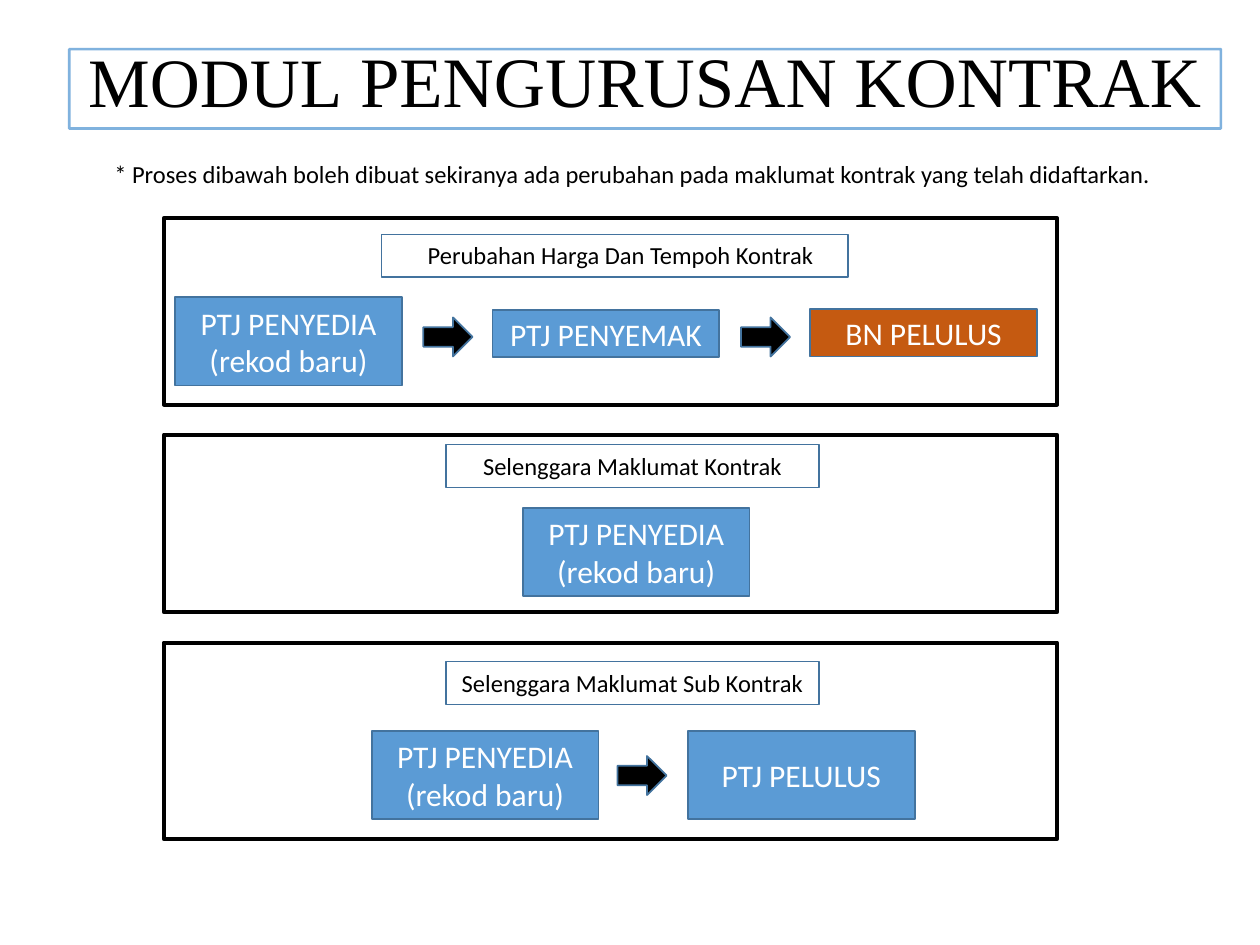
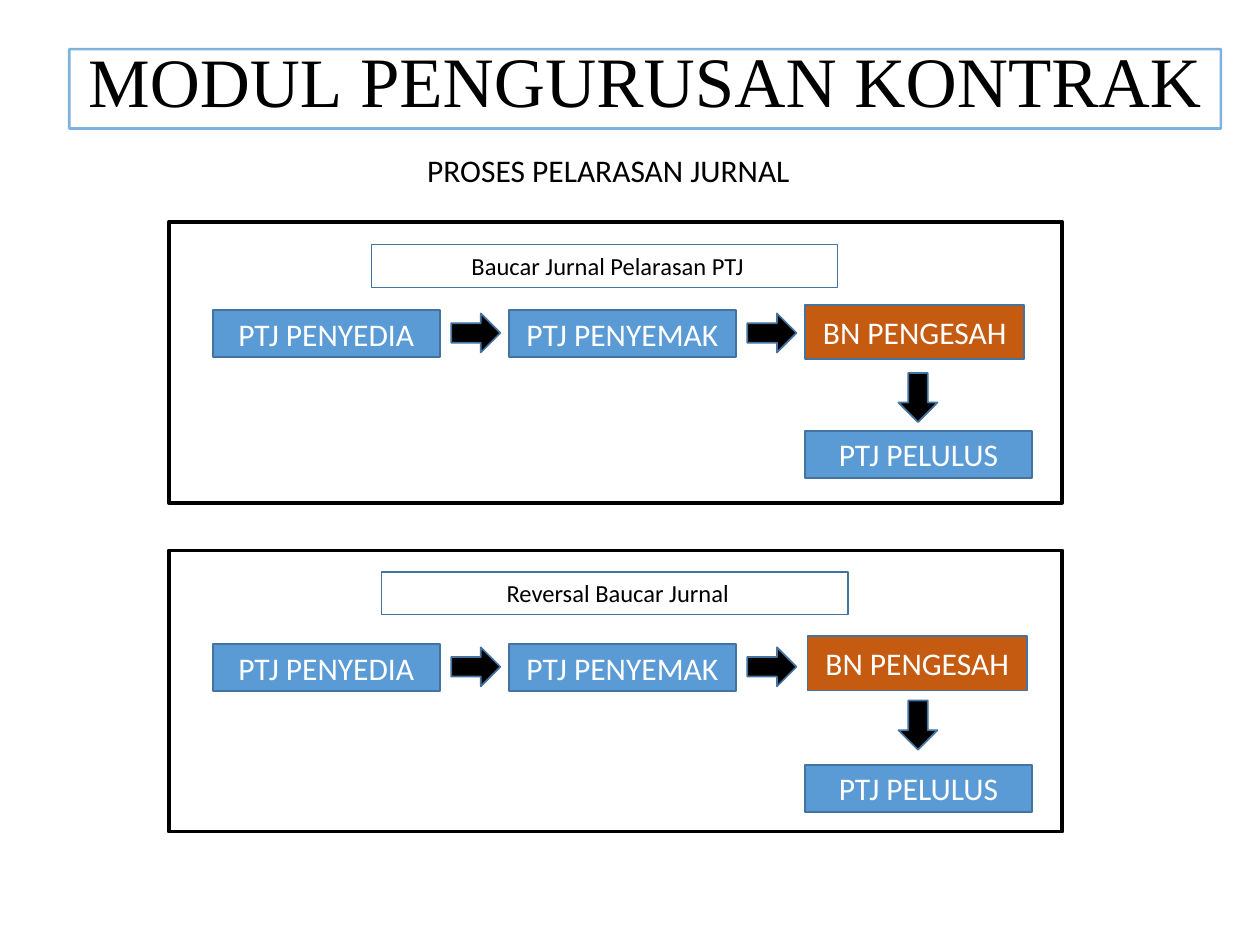
import pptx
import pptx.util
import pptx.dml.color
import pptx.enum.shapes
import pptx.enum.text
import pptx.oxml
import pptx.oxml.ns

Pt = pptx.util.Pt
Kind = pptx.enum.shapes.MSO_SHAPE
Anchor = pptx.enum.text.MSO_ANCHOR
hue = pptx.dml.color.RGBColor.from_string

BLACK, WHITE = "000000", "FFFFFF"
BLUE, EDGE, RUST = "5B9BD5", "43739E", "C55A11"
STEP_W, STEP_H, TALL_H = 129.6, 26.9, 50.4
ARROW_W, ARROW_H = 28.1, 22.3
FRAME_W, HEAD_H = 510.5, 24.5


def box(page, kind, spot, fill, edge, width):
    shape = page.shapes.add_shape(kind, *[Pt(n) for n in spot])
    shape.shadow.inherit = False
    if fill:
        shape.fill.solid()
        shape.fill.fore_color.rgb = hue(fill)
    else:
        shape.fill.background()
    shape.line.color.rgb = hue(edge)
    shape.line.width = Pt(width)
    return shape


def write(shape, text, size, color, anchor, font="Calibri"):
    frame = shape.text_frame
    frame.word_wrap = True
    frame.vertical_anchor = anchor
    frame.text = text
    for para in frame.paragraphs:
        para.alignment = pptx.enum.text.PP_ALIGN.CENTER
        for run in para.runs:
            run.font.name = font
            run.font.size = Pt(size)
            run.font.color.rgb = hue(color)
    return frame


maker = "PTJ PENYEDIA\n(rekod baru)"
change = {
    "note": ("* Proses dibawah boleh dibuat sekiranya ada perubahan pada maklumat kontrak yang telah didaftarkan.",
             14, (38.2, 87.1, 646.6, 24.5)),
    "frames": [(93.6, 124.6, 106.6), (93.6, 248.4, 101.5), (93.6, 367.2, 112.3)],
    "heads": [("Perubahan Harga Dan Tempoh Kontrak", 218.2, 133.9, 266.4, 6.4),
              ("Selenggara Maklumat Kontrak", 254.9, 254.2, 213.1, 0),
              ("Selenggara Maklumat Sub Kontrak", 254.9, 378, 213.1, 0)],
    "steps": [(maker, BLUE, 100.1, 169.9, STEP_W, TALL_H),
              ("PTJ PENYEMAK", BLUE, 281.5, 177.1, STEP_W, STEP_H),
              ("BN PELULUS", RUST, 463, 176.4, STEP_W, 27.4),
              (maker, BLUE, 298.8, 290.2, STEP_W, TALL_H),
              (maker, BLUE, 212.4, 417.6, STEP_W, TALL_H),
              ("PTJ PELULUS", BLUE, 393.1, 417.6, STEP_W, TALL_H)],
    "arrows": [(241.9, 181.4, 0), (423.4, 181.4, 0), (352.8, 432, 0)],
}

journal = {
    "note": ("PROSES PELARASAN JURNAL", 18, (101.5, 82.8, 492.5, 28.8)),
    "frames": [(96.5, 126.7, 160.6), (96.5, 314.6, 160.6)],
    "heads": [("Baucar Jurnal Pelarasan PTJ", 212.4, 139.7, 266.4, 3.2),
              ("Reversal Baucar Jurnal", 218.2, 326.9, 266.4, 3.2)],
    "steps": [],
    "arrows": [],
}
left, pitch = 121.7, 169.2
for top, bank_x, bank_y, down in [(177.1, 460.1, 174.2, 216), (367.9, 461.5, 363.6, 403.2)]:
    for col, name in enumerate(["PTJ PENYEDIA", "PTJ PENYEMAK"]):
        journal["steps"].append((name, BLUE, left + col * pitch, top, STEP_W, STEP_H))
        journal["arrows"].append((257.8 + col * pitch, top + 2, 0))
    journal["steps"].append(("BN PENGESAH", RUST, bank_x, bank_y, 125.3, 31))
    journal["steps"].append(("PTJ PELULUS", BLUE, left + 2 * pitch, top + 69.1, STEP_W, STEP_H))
    journal["arrows"].append((510.5, down, 90))

deck = pptx.Presentation()
deck.slide_width, deck.slide_height = Pt(720), Pt(540)

for plan in [change, journal]:
    page = deck.slides.add_slide(deck.slide_layouts[6])

    title = box(page, Kind.RECTANGLE, (39.6, 28.1, 658.1, 45.4), None, BLUE, 1.5)
    tint = title.line.fill.fore_color._xFill.find(pptx.oxml.ns.qn("a:srgbClr"))
    tint.append(pptx.oxml.parse_xml('<a:alpha %s val="76000"/>' % pptx.oxml.ns.nsdecls("a")))
    frame = write(title, "MODUL", 39.6, BLACK, Anchor.BOTTOM, "Times New Roman")
    para = frame.paragraphs[0]
    para.line_spacing = 0.9
    rest = para.add_run()
    rest.text = " PENGURUSAN KONTRAK"
    rest.font.name = "Times New Roman"
    rest.font.size = Pt(40.5)
    rest.font.color.rgb = hue(BLACK)

    text, size, spot = plan["note"]
    note = page.shapes.add_textbox(*[Pt(n) for n in spot])
    write(note, text, size, BLACK, Anchor.TOP)

    for x, y, high in plan["frames"]:
        box(page, Kind.RECTANGLE, (x, y, FRAME_W, high), None, BLACK, 2.25)

    for text, x, y, wide, shift in plan["heads"]:
        head = box(page, Kind.RECTANGLE, (x, y, wide, HEAD_H), None, EDGE, 0.75)
        write(head, text, 14, BLACK, Anchor.TOP).margin_left = Pt(7.2 + shift)

    for text, fill, *spot in plan["steps"]:
        step = box(page, Kind.RECTANGLE, spot, fill, EDGE, 1)
        write(step, text, 18, WHITE, Anchor.MIDDLE)

    for x, y, turn in plan["arrows"]:
        arrow = box(page, Kind.RIGHT_ARROW, (x, y, ARROW_W, ARROW_H), BLACK, EDGE, 1)
        arrow.rotation = turn

deck.save("out.pptx")
